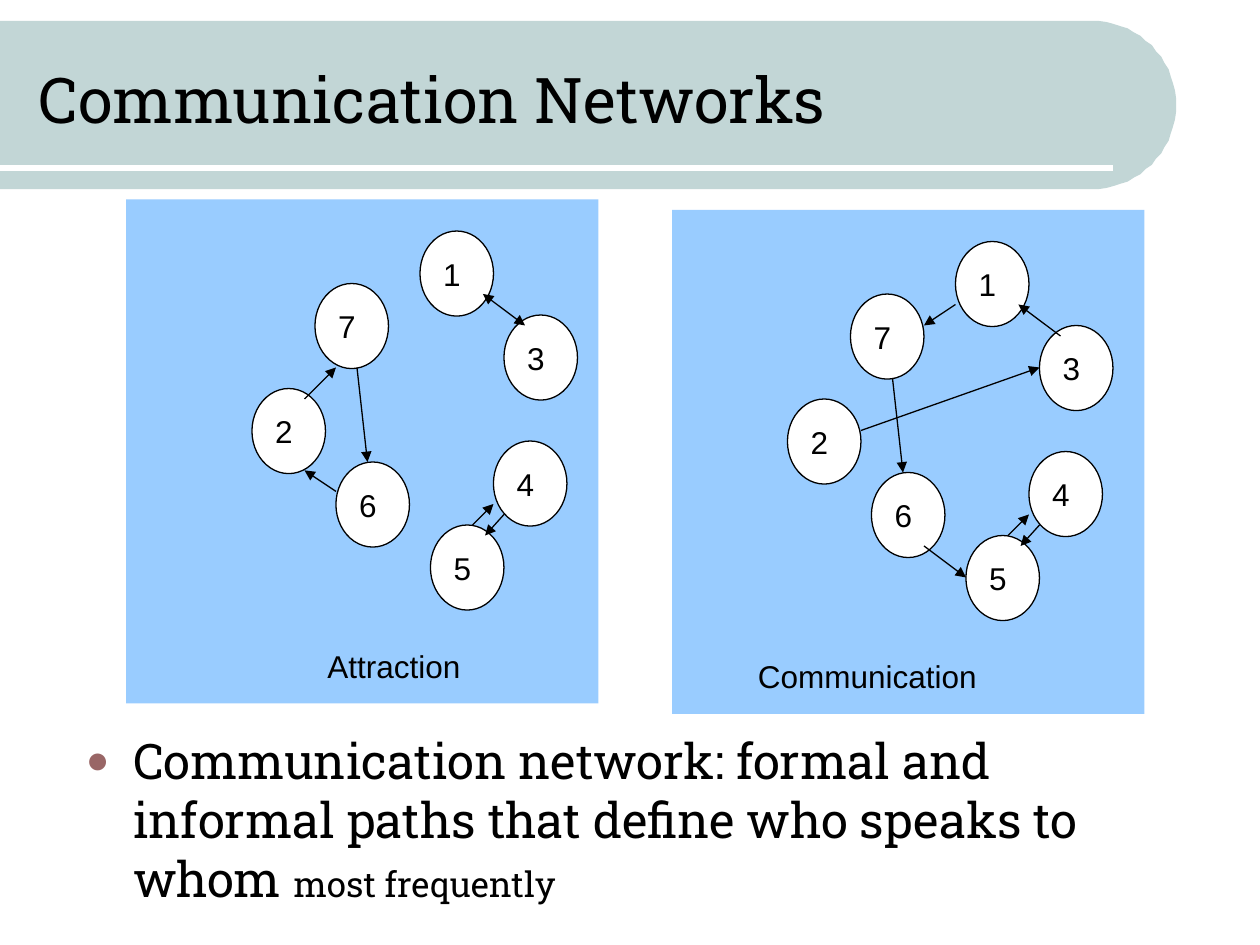
import math

import pptx
import pptx.dml.color
import pptx.enum.shapes
import pptx.enum.text
import pptx.oxml
import pptx.oxml.ns
import pptx.util

PX = 7620
COLOURS = {"banner": "C2D6D6", "panel": "99CCFF", "paper": "FFFFFF",
           "ink": "000000", "bullet": "996666"}
SLAB = {"name": "Roboto Slab"}
LABEL = {"name": "Arial", "size": pptx.util.Pt(18)}
FRAME = {"word_wrap": True, "vertical_anchor": pptx.enum.text.MSO_ANCHOR.TOP}
MIDDLE = {"word_wrap": True, "vertical_anchor": pptx.enum.text.MSO_ANCHOR.MIDDLE}
LEFT = {"alignment": pptx.enum.text.PP_ALIGN.LEFT}

NODE_SIZE = (70, 81)
NODES = {"7": (180, 80), "1": (280, 30), "2": (120, 180), "3": (360, 110),
         "4": (350, 230), "5": (290, 310), "6": (200, 250)}
SHARED_LINKS = [(220, 160, 230, 250), (330, 310, 350, 290), (360, 300, 342, 320)]
ATTRACTION_LINKS = [(200, 278, 170, 258), (170, 190, 200, 160)]
MUTUAL_LINKS = [(340, 90, 380, 120)]
COMMUNICATION_LINKS = [(280, 90, 250, 110), (250, 320, 290, 350),
                       (190, 210, 360, 150), (380, 120, 340, 90)]


def emu(*lengths):
    """Turn px lengths into EMU."""
    return [pptx.util.Emu(length * PX) for length in lengths]


def colour(name):
    """Look up a named colour."""
    return pptx.dml.color.RGBColor.from_string(COLOURS[name])


def apply(target, values):
    """Set attributes of an object from a dict."""
    for name, value in values.items():
        setattr(target, name, value)


def paint(shape, fill, line=None):
    """Give a shape a plain fill and an optional thin outline."""
    shape.shadow.inherit = False
    shape.fill.solid()
    shape.fill.fore_color.rgb = colour(fill)
    if line:
        shape.line.color.rgb = colour(line)
        shape.line.width = pptx.util.Pt(0.75)
    else:
        shape.line.fill.background()


def write(shape, spans, frame_values, para_values):
    """Write one paragraph made of (text, font values) spans."""
    apply(shape.text_frame, frame_values)
    para = shape.text_frame.paragraphs[0]
    apply(para, para_values)
    for text, font_values in spans:
        span = para.add_run()
        span.text = text
        apply(span.font, font_values)
        span.font.color.rgb = colour("ink")
    return para


def add_line(page, ends, ink, width, arrows=()):
    """Draw a straight line with triangles at the named ends."""
    line = page.shapes.add_connector(
        pptx.enum.shapes.MSO_CONNECTOR.STRAIGHT, *emu(*ends))
    line.line.color.rgb = colour(ink)
    line.line.width = pptx.util.Pt(width)
    for end in arrows:
        pptx.oxml.ns.qn("a:ln")
        arrow = line.line._get_or_add_ln().makeelement(
            pptx.oxml.ns.qn("a:" + end), {"type": "triangle"})
        line.line._get_or_add_ln().append(arrow)
    properties = line._element.spPr
    properties.append(properties.makeelement(pptx.oxml.ns.qn("a:effectLst"), {}))


def add_banner(page, box, title):
    """Draw the round-ended title band with its rule and title."""
    left, top, width, height = box
    radius = height // 2
    centre = left + width - radius
    arc = [(centre + radius * math.sin(math.radians(angle)),
            top + radius - radius * math.cos(math.radians(angle)))
           for angle in range(0, 181, 5)]
    outline = page.shapes.build_freeform(left, top, scale=PX)
    outline.add_line_segments(arc + [(left, top + height)], close=True)
    paint(outline.convert_to_shape(), "banner")
    rule = top + height - 20
    add_line(page, (left, rule, left + width - 60, rule), "paper", 3)
    text = page.shapes.add_textbox(*emu(left + 25, top + 10, 1052, 120))
    write(text, [("Communication Networks", SLAB | {"size": pptx.util.Pt(36)}),
                 (" ", SLAB | {"size": pptx.util.Pt(42)})], MIDDLE, LEFT)


def add_network(page, box, shift, links, mutual_links, caption, caption_box):
    """Draw a panel with seven numbered nodes, their arrows and a caption."""
    left, top, width, height = box
    kinds = pptx.enum.shapes.MSO_SHAPE
    paint(page.shapes.add_shape(kinds.RECTANGLE, *emu(*box)), "panel")
    origin = left + shift
    for number, (x, y) in NODES.items():
        node = page.shapes.add_shape(
            kinds.OVAL, *emu(origin + x, top + y, *NODE_SIZE))
        paint(node, "paper", "ink")
        write(node, [(number, LABEL)], MIDDLE, LEFT)
    for group, arrows in ((SHARED_LINKS + links, ["tailEnd"]),
                          (mutual_links, ["headEnd", "tailEnd"])):
        for x1, y1, x2, y2 in group:
            ends = (origin + x1, top + y1, origin + x2, top + y2)
            add_line(page, ends, "ink", 0.75, arrows)
    x, y, caption_width, caption_height = caption_box
    text = page.shapes.add_textbox(
        *emu(left + x, top + y, caption_width, caption_height))
    write(text, [(caption, LABEL)], FRAME,
          LEFT | {"space_before": pptx.util.Pt(9)})


def add_definition(page, box):
    """Write the bulleted definition."""
    text = page.shapes.add_textbox(*emu(*box))
    para = write(
        text,
        [("Communication network: formal and informal paths that define "
          "who speaks to whom ", SLAB | {"size": pptx.util.Pt(28)}),
         ("most frequently", SLAB | {"size": pptx.util.Pt(20)})],
        FRAME, LEFT | {"space_before": pptx.util.Pt(5.6)})
    properties = para._p.get_or_add_pPr()
    indent = 45 * PX
    properties.set("marL", str(indent))
    properties.set("indent", str(-indent))
    space = pptx.oxml.ns.nsdecls("a")
    for markup in (
            f'<a:buClr {space}><a:srgbClr val="{COLOURS["bullet"]}"/></a:buClr>',
            f'<a:buSzPct {space} val="80000"/>',
            f'<a:buFont {space} typeface="Arial"/>',
            f'<a:buChar {space} char="●"/>'):
        properties.append(pptx.oxml.parse_xml(markup))


def main():
    """Build the slide and save the deck."""
    deck = pptx.Presentation()
    apply(deck, dict(zip(("slide_width", "slide_height"), emu(1200, 900))))
    page = deck.slides.add_slide(deck.slide_layouts[6])
    add_banner(page, (0, 20, 1120, 160), "Communication Networks")
    add_definition(page, (70, 690, 1070, 150))
    add_network(page, (120, 190, 450, 480), 0, ATTRACTION_LINKS, MUTUAL_LINKS,
                "Attraction", (180, 420, 220, 60))
    add_network(page, (640, 200, 450, 480), -10, COMMUNICATION_LINKS, [],
                "Communication", (70, 420, 320, 60))
    deck.save("out.pptx")


if __name__ == "__main__":
    main()
